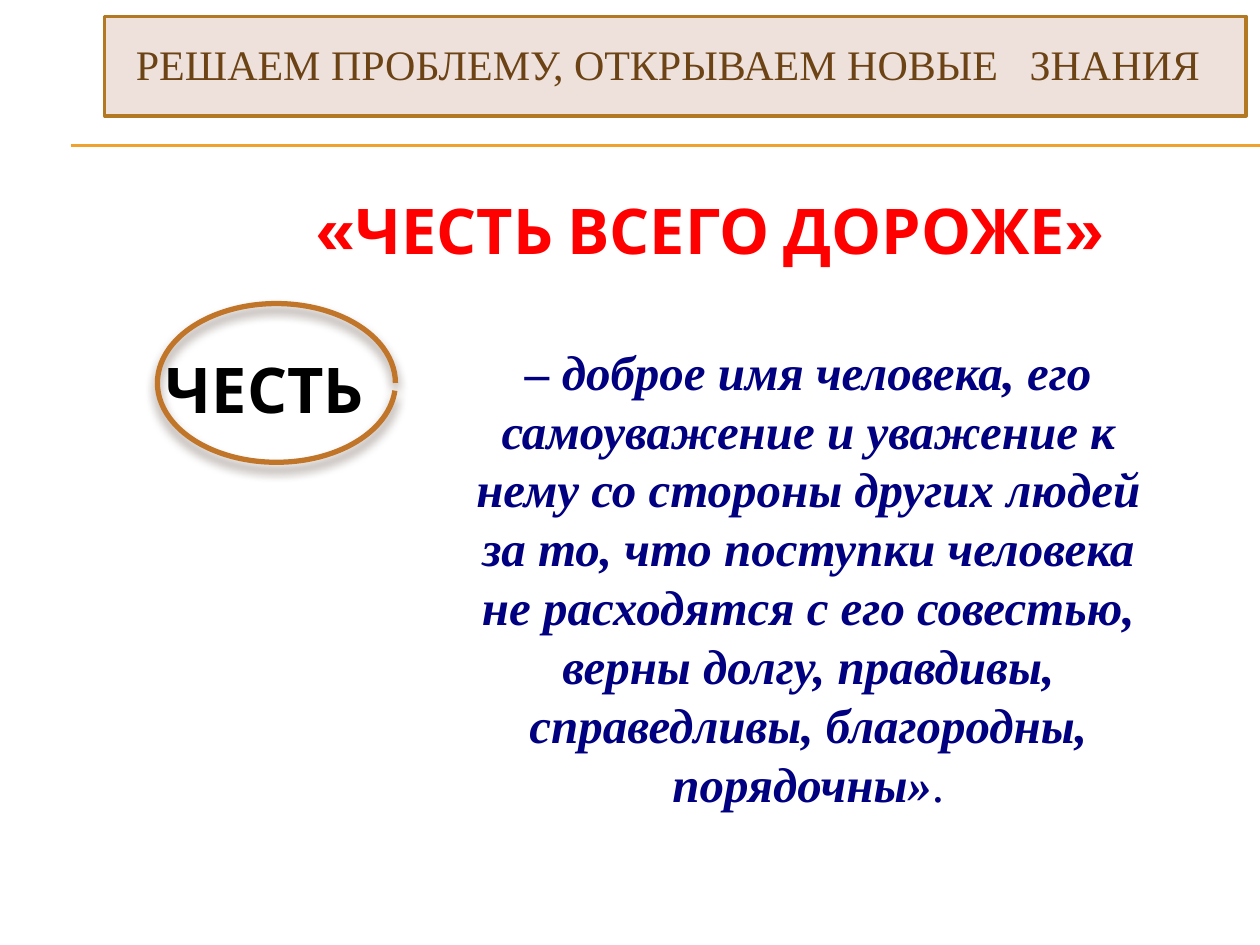
from lxml import etree
from pptx import Presentation
from pptx.dml.color import RGBColor
from pptx.enum.shapes import MSO_CONNECTOR as Conn, MSO_SHAPE as Kind
from pptx.enum.text import MSO_AUTO_SIZE as Fit, PP_ALIGN as Align
from pptx.oxml import parse_xml
from pptx.oxml.ns import qn
from pptx.util import Pt

GOLD = RGBColor(0xF0, 0xA2, 0x2E)
RED = RGBColor(0xFF, 0, 0)
BLACK = RGBColor(0, 0, 0)
NAVY = RGBColor(0, 0, 0x80)
BROWN = RGBColor(0x6C, 0x43, 0x15)
COPPER = RGBColor(0xC1, 0x75, 0x29)
OCHRE = RGBColor(0xB2, 0x78, 0x22)
ROSE = RGBColor(0xEE, 0xE0, 0xDB)
SERIF = "Times New Roman"
SANS = "Cabin"

SHADOW = """
<a:effectLst xmlns:a="http://schemas.openxmlformats.org/drawingml/2006/main">
  <a:outerShdw blurRad="76200" dist="50800" dir="5400000" rotWithShape="0">
    <a:srgbClr val="4E3B30"><a:alpha val="60000"/></a:srgbClr>
  </a:outerShdw>
</a:effectLst>
"""


def add_text(slide, box, text, font, size, color):
    frame = slide.shapes.add_textbox(*map(Pt, box)).text_frame
    frame.word_wrap = True
    frame.auto_size = Fit.SHAPE_TO_FIT_TEXT
    para = frame.paragraphs[0]
    para.add_run().text = text
    para.font.name = font
    para.font.size = Pt(size)
    para.font.color.rgb = color
    return para


def add_rules(slide, box):
    left, top, width, height = box
    for y in (top, top + height):
        rule = slide.shapes.add_connector(
            Conn.STRAIGHT, Pt(left), Pt(y), Pt(left + width), Pt(y))
        rule.line.color.rgb = GOLD
        rule.line.width = Pt(0.75)
        etree.SubElement(rule._element.spPr, qn("a:effectLst"))


def add_banner(slide, box):
    left, top, width, height = box
    panel = slide.shapes.add_shape(Kind.RECTANGLE, *map(Pt, box))
    panel.shadow.inherit = False
    panel.fill.solid()
    panel.fill.fore_color.rgb = ROSE
    panel.line.color.rgb = OCHRE
    panel.line.width = Pt(2)
    add_text(slide, (left + 10.8, top + 9.4, width - 11.5, 36),
             "РЕШАЕМ ПРОБЛЕМУ, ОТКРЫВАЕМ НОВЫЕ   ЗНАНИЯ", SERIF, 24, BROWN)


def add_motto(slide, box):
    para = add_text(slide, box, "«ЧЕСТЬ ВСЕГО ДОРОЖЕ»", SANS, 36, RED)
    para.font.bold = True


def add_term(slide, box):
    left, top, width, height = box
    ring = slide.shapes.add_shape(Kind.ARC, *map(Pt, box))
    ring.adjustments[0] = 2.236
    ring.adjustments[1] = 0
    ring.fill.background()
    ring.line.color.rgb = COPPER
    ring.line.width = Pt(3)
    ring._element.spPr.append(parse_xml(SHADOW))
    para = add_text(slide, (left - 2.2, top + 23, width + 22.3, 51),
                    "ЧЕСТЬ", SANS, 36, BLACK)
    para.font.bold = True


def add_meaning(slide, box):
    para = add_text(
        slide, box,
        "– доброе имя человека, его самоуважение и уважение к нему "
        "со стороны других людей за то, что поступки человека "
        "не расходятся с его совестью, верны долгу, правдивы, "
        "справедливы, благородны, порядочны»", SERIF, 28, NAVY)
    para.alignment = Align.CENTER
    words = para.runs[0]
    words.font.bold = words.font.italic = True
    para.add_run().text = "."


def main():
    deck = Presentation()
    deck.slide_width, deck.slide_height = Pt(720), Pt(540)
    slide = deck.slides.add_slide(deck.slide_layouts[6])
    add_rules(slide, (40.5, 82.8, 679.5, 0.6))
    add_motto(slide, (174.2, 105.8, 481.7, 51))
    add_term(slide, (90, 173.5, 136, 90.7))
    add_meaning(slide, (252, 191.5, 419.8, 276.5))
    add_banner(slide, (59.8, 9.3, 652.3, 56.9))
    deck.save("out.pptx")


if __name__ == "__main__":
    main()
